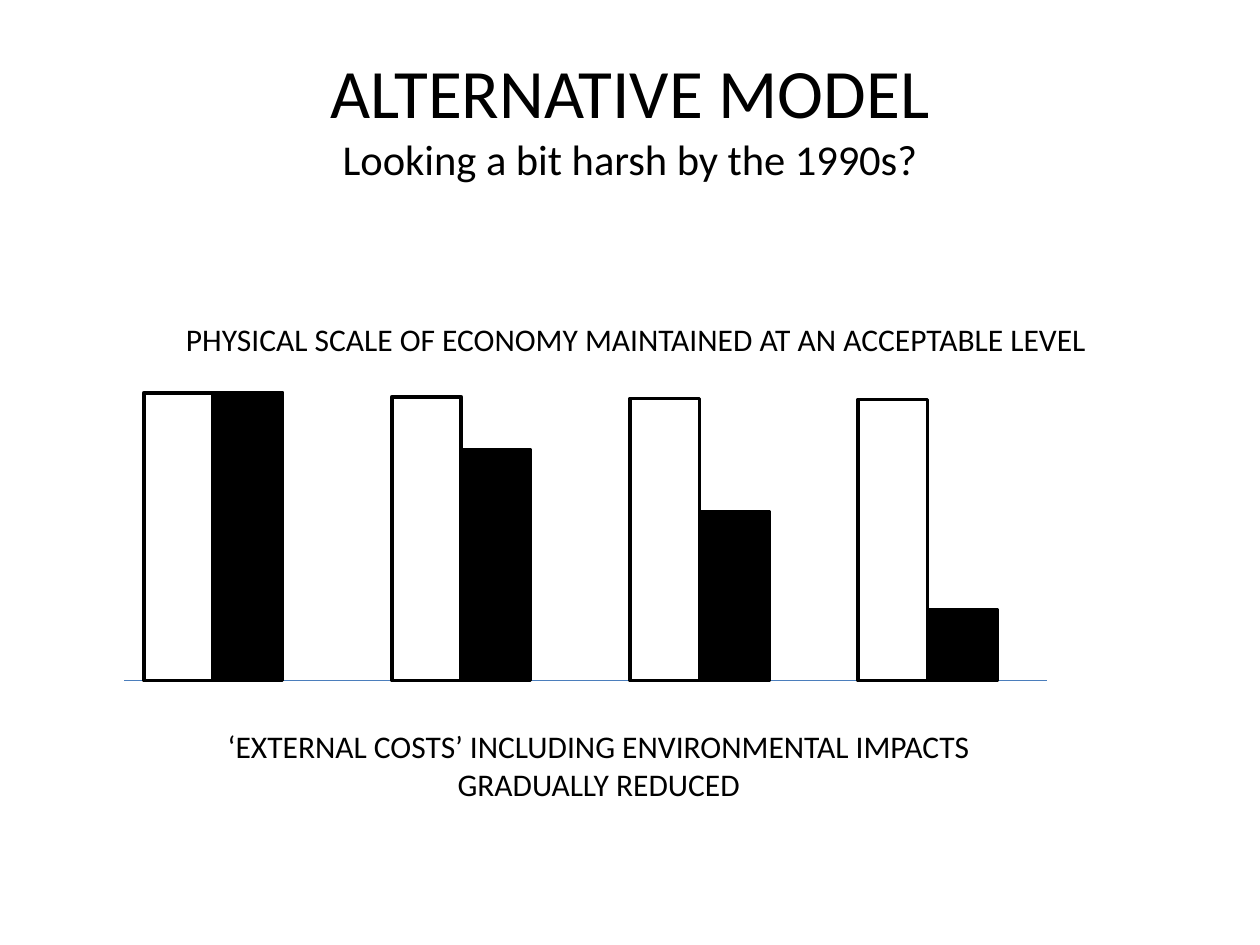
from lxml import etree
from pptx import Presentation
from pptx import util as u
from pptx.dml.color import RGBColor
from pptx.enum import shapes, text
from pptx.oxml.ns import qn

BLACK = RGBColor(0x00, 0x00, 0x00)
WHITE = RGBColor(0xFF, 0xFF, 0xFF)
BLUE = RGBColor(0x4B, 0x7E, 0xBC)

BASELINE = 13.72
BAR_WIDTH = 1.4
BAR_PAIRS = [
    (2.9, 7.92, 7.92),
    (7.9, 8.0, 9.07),
    (12.7, 8.03, 10.31),
    (17.3, 8.05, 12.29),
]


class SlideBuilder:
    font_name = "Calibri"
    text_color = BLACK
    outline_width = u.Pt(2)

    def __init__(self, slide):
        self.slide = slide

    def textbox(self, left, top, width, height, lines, align, anchor):
        box = self.slide.shapes.add_textbox(
            u.Cm(left), u.Cm(top), u.Cm(width), u.Cm(height))
        frame = box.text_frame
        frame.word_wrap = True
        frame.vertical_anchor = anchor
        para = frame.paragraphs[0]
        para.alignment = align
        para.font.name = self.font_name
        para.font.color.rgb = self.text_color
        for index, (wording, size) in enumerate(lines):
            if index:
                para.add_line_break()
            span = para.add_run()
            span.text = wording
            span.font.size = u.Pt(size)

    def caption(self, left, top, width, height, wording,
                align=text.PP_ALIGN.CENTER):
        self.textbox(left, top, width, height, [(wording, 18)],
                     align, text.MSO_ANCHOR.TOP)

    def title(self, left, top, width, height, lines):
        self.textbox(left, top, width, height, lines,
                     text.PP_ALIGN.CENTER, text.MSO_ANCHOR.MIDDLE)

    def bar(self, left, top, color):
        bar = self.slide.shapes.add_shape(
            shapes.MSO_SHAPE.RECTANGLE, u.Cm(left), u.Cm(top),
            u.Cm(BAR_WIDTH), u.Cm(BASELINE - top))
        bar.shadow.inherit = False
        bar.fill.solid()
        bar.fill.fore_color.rgb = color
        bar.line.color.rgb = BLACK
        bar.line.width = self.outline_width

    def axis(self, start, end):
        axis = self.slide.shapes.add_connector(
            shapes.MSO_CONNECTOR.STRAIGHT,
            u.Cm(start), u.Cm(BASELINE), u.Cm(end), u.Cm(BASELINE))
        axis.line.color.rgb = BLUE
        axis.line.width = u.Pt(0.75)
        etree.SubElement(axis.element.spPr, qn("a:effectLst"))


def main():
    deck = Presentation()
    deck.slide_width = u.Cm(25.4)
    deck.slide_height = u.Cm(19.05)
    page = SlideBuilder(deck.slides.add_slide(deck.slide_layouts[6]))

    page.title(1.27, 0.76, 22.86, 3.18, [
        ("ALTERNATIVE MODEL", 39.6),
        ("Looking a bit harsh by the 1990s?", 24.3),
    ])
    page.axis(2.5, 21.1)
    for left, scale_top, cost_top in BAR_PAIRS:
        page.bar(left + BAR_WIDTH, cost_top, BLACK)
        page.bar(left, scale_top, WHITE)
    page.caption(
        4.32, 14.53, 15.5, 1.8,
        "‘EXTERNAL COSTS’ INCLUDING ENVIRONMENTAL IMPACTS GRADUALLY REDUCED")
    page.caption(
        3.5, 6.32, 18.98, 1.02,
        "PHYSICAL SCALE OF ECONOMY MAINTAINED AT AN ACCEPTABLE LEVEL",
        text.PP_ALIGN.LEFT)
    deck.save("out.pptx")


if __name__ == "__main__":
    main()
